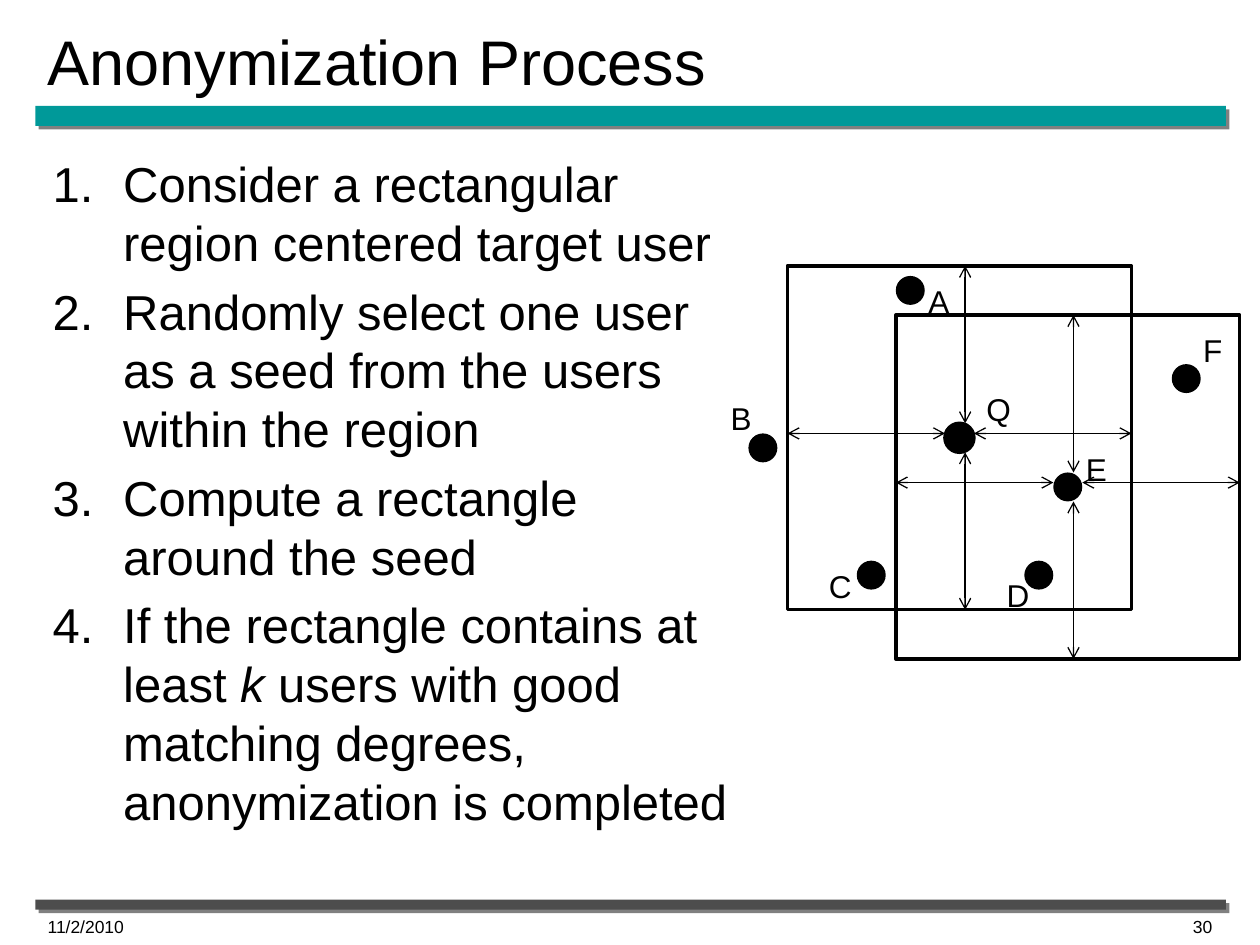
from lxml import etree
from pptx import Presentation
from pptx.dml.color import RGBColor
from pptx.enum.shapes import MSO_CONNECTOR, MSO_SHAPE
from pptx.enum.text import MSO_ANCHOR, PP_ALIGN
from pptx.oxml.ns import qn
from pptx.util import Inches, Pt

RECT, OVAL = MSO_SHAPE.RECTANGLE, MSO_SHAPE.OVAL
LINE = MSO_CONNECTOR.STRAIGHT
TOP, MID = MSO_ANCHOR.TOP, MSO_ANCHOR.MIDDLE
LEFT, RIGHT = PP_ALIGN.LEFT, PP_ALIGN.RIGHT
HUES = {"ink": "000000", "teal": "009999", "gray": "4D4D4D", "shade": "808080"}
STEPS = [
    ["Consider a rectangular region centered target user"],
    ["Randomly select one user as a seed from the users within the region"],
    ["Compute a rectangle around the seed"],
    ["If the rectangle contains at least ", "k",
     " users with good matching degrees, anonymization is completed"],
]
DOT, SIDE = 0.23, 2.73
DOTS = [(6.8, 4.45), (8.13, 4.45), (9.3, 2.89), (7.11, 2.19), (5.94, 3.44), (8.36, 3.75)]
TAGS = {"Q": (7.73, 3.05), "A": (7.27, 2.19), "B": (5.7, 3.12), "C": (6.48, 4.45),
        "D": (7.89, 4.52), "E": (8.52, 3.52), "F": (9.45, 2.58)}


def hue(name):
    """Return the named colour."""
    return RGBColor.from_string(HUES[name])


def apply(item, **form):
    """Set each format value on the item."""
    for key, value in form.items():
        setattr(item, key, value)


def sub(node, tag, **attrs):
    """Append an XML child with its attributes."""
    child = etree.SubElement(node, qn(tag))
    for key, value in attrs.items():
        child.set(key, value)
    return child


def write(part, text, size, italic=False):
    """Add a run of text to a paragraph."""
    run = part.add_run()
    run.text = text
    apply(run.font, name="Arial", size=Pt(size), italic=italic)
    run.font.color.rgb = hue("ink")


def label(slide, box, text, size, align=LEFT):
    """Place a one-line text box."""
    frame = slide.shapes.add_textbox(*map(Inches, box)).text_frame
    apply(frame, word_wrap=True, vertical_anchor=TOP)
    part = frame.paragraphs[0]
    part.alignment = align
    write(part, text, size)


def shape(slide, kind, box, fill=None, edge=0):
    """Place a shape with an optional fill and outline."""
    item = slide.shapes.add_shape(kind, *map(Inches, box))
    item.shadow.inherit = False
    if fill:
        item.fill.solid()
        item.fill.fore_color.rgb = hue(fill)
    else:
        item.fill.background()
    if edge:
        item.line.color.rgb = hue("ink")
        item.line.width = Pt(edge)
    else:
        item.line.fill.background()
    return item


def bar(slide, box, fill):
    """Place a rule with a hard drop shadow."""
    props = shape(slide, RECT, box, fill)._element.spPr
    cast = sub(props.find(qn("a:effectLst")), "a:outerShdw", blurRad="0",
               dist=str(Pt(2.8)), dir="2700000", algn="ctr", rotWithShape="0")
    sub(cast, "a:srgbClr", val=HUES["shade"])


def arrow(slide, start, end):
    """Draw a thin line with an arrowhead at both ends."""
    line = slide.shapes.add_connector(LINE, *map(Inches, start + end))
    line.line.color.rgb = hue("ink")
    line.line.width = Pt(0.75)
    stroke = line.line._get_or_add_ln()
    for tag in ("a:headEnd", "a:tailEnd"):
        sub(stroke, tag, type="arrow")
    sub(line._element.spPr, "a:effectLst")


def head(slide, box):
    """Place the slide title."""
    title = slide.shapes.title
    apply(title, **dict(zip(("left", "top", "width", "height"), map(Inches, box))))
    apply(title.text_frame, word_wrap=True, vertical_anchor=MID)
    part = title.text_frame.paragraphs[0]
    part.alignment = LEFT
    write(part, "Anonymization Process", 36)


def steps(slide, box):
    """Place the numbered steps."""
    frame = slide.shapes.add_textbox(*map(Inches, box)).text_frame
    apply(frame, word_wrap=True, vertical_anchor=TOP)
    for row, texts in enumerate(STEPS):
        part = frame.add_paragraph() if row else frame.paragraphs[0]
        apply(part, space_before=Pt(5.6), line_spacing=1.0)
        props = part._p.get_or_add_pPr()
        props.set("marL", str(Inches(0.56)))
        props.set("indent", str(-Inches(0.56)))
        sub(props, "a:buFont", typeface="Arial")
        sub(props, "a:buAutoNum", type="arabicPeriod")
        for text in texts:
            write(part, text, 28, text == "k")


def region(slide, x, y):
    """Draw a square region with arrows from its user to its sides."""
    shape(slide, RECT, (x, y, SIDE, SIDE), edge=2)
    for near, far in ((0, 1.25), (1.48, SIDE)):
        arrow(slide, (x + near, y + 1.33), (x + far, y + 1.33))
        arrow(slide, (x + 1.41, y + near), (x + 1.41, y + far))


def users(slide):
    """Draw the users, their names and both regions."""
    for spot in DOTS:
        shape(slide, OVAL, spot + (DOT, DOT), "ink")
    for name, spot in TAGS.items():
        label(slide, spot + (0.39, 0.4), name, 18)
    region(slide, 6.25, 2.11)
    shape(slide, OVAL, (7.5, 3.36, DOT, DOT), "ink", 2)
    region(slide, 7.11, 2.5)


def main():
    """Build and save the slide."""
    deck = Presentation()
    apply(deck, slide_width=Inches(10), slide_height=Inches(7.5))
    slide = deck.slides.add_slide(deck.slide_layouts[5])
    bar(slide, (0.28, 0.84, 9.45, 0.16), "teal")
    bar(slide, (0.28, 7.14, 9.45, 0.08), "gray")
    head(slide, (0.28, 0.12, 9.45, 0.71))
    steps(slide, (0.32, 1.17, 5.63, 4.47))
    users(slide)
    label(slide, (0.28, 7.22, 2.33, 0.28), "11/2/2010", 10)
    label(slide, (7.39, 7.22, 2.33, 0.28), "30", 10, RIGHT)
    deck.save("out.pptx")


if __name__ == "__main__":
    main()
